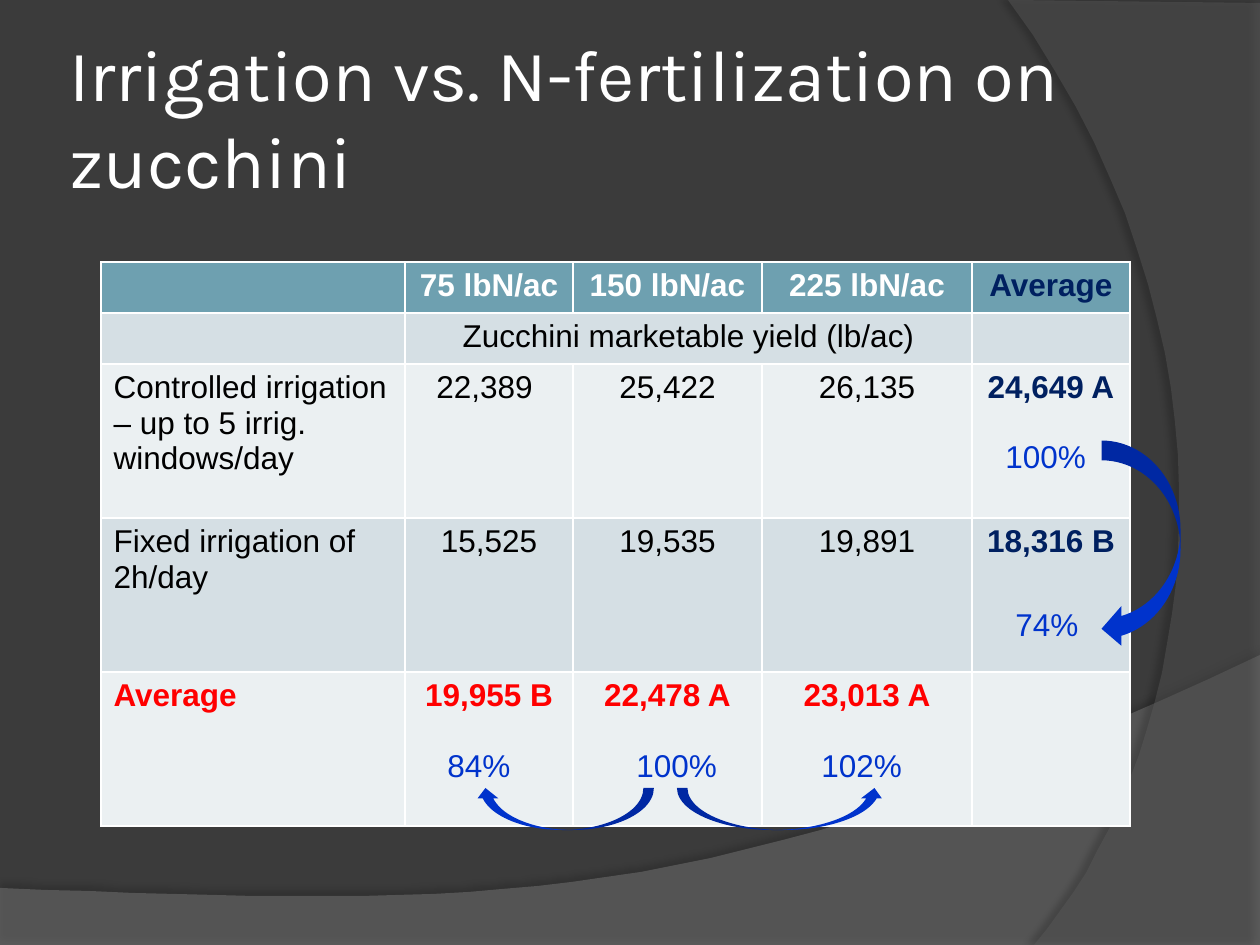
"""Build a slide comparing irrigation and N-fertilization on zucchini yield."""
from lxml import etree
from pptx import Presentation
from pptx.dml.color import RGBColor
from pptx.enum.shapes import MSO_SHAPE
from pptx.enum.text import MSO_ANCHOR, MSO_AUTO_SIZE, PP_ALIGN
from pptx.oxml.ns import qn
from pptx.util import Emu, Pt

CURVED_UP = MSO_SHAPE.CURVED_UP_ARROW
MIDDLE = MSO_ANCHOR.MIDDLE
LEFT, CENTER = PP_ALIGN.LEFT, PP_ALIGN.CENTER
FIT_SHAPE = MSO_AUTO_SIZE.SHAPE_TO_FIT_TEXT
SCALE = 914400 / 126

WHITE = RGBColor(0xFF, 0xFF, 0xFF)
BLACK = RGBColor(0, 0, 0)
BACKGROUND = RGBColor(0x3B, 0x3B, 0x3B)
WAVE_GRAY = RGBColor(0x7F, 0x7F, 0x7F)
ARC_GRAY = RGBColor(0x5E, 0x5E, 0x5E)
TEAL = RGBColor(0x6E, 0xA0, 0xB0)
BAND_DARK = RGBColor(0xD5, 0xDF, 0xE4)
BAND_LIGHT = RGBColor(0xEB, 0xF0, 0xF2)
NAVY = RGBColor(0x00, 0x20, 0x60)
RED = RGBColor(0xFF, 0, 0)
BLUE = RGBColor(0x00, 0x33, 0xCC)

COL_WIDTHS = (304, 168, 189, 210, 158)
ROW_HEIGHTS = (51, 51, 154, 154, 154)
ROW_FILLS = (TEAL, BAND_DARK, BAND_LIGHT, BAND_DARK, BAND_LIGHT)
ROWS = (
    ("", "75 lbN/ac", "150 lbN/ac", "225 lbN/ac", "Average"),
    ("", "Zucchini marketable yield (lb/ac)", "", "", ""),
    ("Controlled irrigation – up to 5 irrig. windows/day",
     "22,389 ", "25,422", "26,135", "24,649 A"),
    ("Fixed irrigation of 2h/day", "15,525", "19,535", "19,891", "18,316 B"),
    ("Average", "19,955 B", "22,478 A", "23,013 A", ""),
)
PERCENTAGES = (
    ("84%", 435, 740, 89), ("100%", 624, 740, 107), ("102%", 809, 740, 107),
    ("100%", 993, 431, 107), ("74%", 1003, 599, 89),
)


def px(*values):
    """Turn pixel lengths into EMU."""
    return [Emu(round(v * SCALE)) for v in values]


def set_font(p, name, size, color, bold=False):
    """Format a whole paragraph."""
    p.font.name, p.font.size, p.font.bold = name, Pt(size), bold
    p.font.color.rgb = color


def bezier(start, c1, c2, end, steps=32):
    """Return points along a cubic curve, without its start."""
    points = []
    for t in (i / steps for i in range(1, steps + 1)):
        weights = ((1 - t) ** 3, 3 * t * (1 - t) ** 2, 3 * t * t * (1 - t), t ** 3)
        points.append(tuple(sum(w * v for w, v in zip(weights, axis))
                            for axis in zip(start, c1, c2, end)))
    return points


def add_backdrop(s, corners, curve, color, opacity, shadow):
    """Add a translucent outline with one curved edge and a soft shadow."""
    builder = s.shapes.build_freeform(*corners[0], scale=SCALE)
    builder.add_line_segments(corners[1:] + bezier(corners[-1], *curve))
    sp = builder.convert_to_shape()
    sp.fill.solid()
    sp.fill.fore_color.rgb = color
    sp.line.fill.background()
    clr = sp.element.spPr.find(qn("a:solidFill"))[0]
    etree.SubElement(clr, qn("a:alpha"), val=str(opacity * 1000))
    sp.shadow.inherit = False
    alpha, blur, dist, angle = shadow
    outer = etree.SubElement(
        sp.element.spPr.find(qn("a:effectLst")), qn("a:outerShdw"),
        blurRad=str(Pt(blur)), dist=str(Pt(dist)), dir=str(angle * 60000))
    shade = etree.SubElement(outer, qn("a:srgbClr"), val=str(BLACK))
    etree.SubElement(shade, qn("a:alpha"), val=str(alpha * 1000))


def add_title(s, text):
    """Format the title placeholder and lay it over the backdrop."""
    title = s.shapes.title
    title.left, title.top, title.width, title.height = px(63, 38, 1029, 157)
    tf = title.text_frame
    tf.text = text
    tf.word_wrap, tf.vertical_anchor = True, MIDDLE
    tf.margin_left, tf.margin_top, tf.margin_right, tf.margin_bottom = px(6, 6, 6, 6)
    p = tf.paragraphs[0]
    p.alignment = LEFT
    set_font(p, "Karla", 41.4, WHITE)
    title.element.getparent().append(title.element)


def cell_color(row, col):
    """Choose the text colour of a table cell."""
    if col == 4:
        return NAVY
    return {0: WHITE, 4: RED}.get(row, BLACK)


def add_yield_table(s):
    """Add the table of yields by irrigation and nitrogen rate."""
    frame = s.shapes.add_table(len(ROWS), len(COL_WIDTHS),
                               *px(101, 262, sum(COL_WIDTHS), sum(ROW_HEIGHTS)))
    table = frame.table
    for column, width in zip(table.columns, px(*COL_WIDTHS)):
        column.width = width
    for row, height in zip(table.rows, px(*ROW_HEIGHTS)):
        row.height = height
    for i, texts in enumerate(ROWS):
        for j, text in enumerate(texts):
            cell = table.cell(i, j)
            cell.fill.solid()
            cell.fill.fore_color.rgb = ROW_FILLS[i]
            cell.text = text
            p = cell.text_frame.paragraphs[0]
            p.alignment = CENTER if j else LEFT
            set_font(p, "Arial", 18, cell_color(i, j), i in (0, 4) or j == 4)
    table.cell(1, 1).merge(table.cell(1, 3))


def add_arrow(s, box, rotation=0, flip=None):
    """Add a curved arrow between two percentages."""
    sp = s.shapes.add_shape(CURVED_UP, *px(*box))
    sp.fill.solid()
    sp.fill.fore_color.rgb = BLUE
    sp.line.fill.background()
    sp.shadow.inherit = False
    sp.rotation = rotation
    if flip:
        sp.element.spPr.find(qn("a:xfrm")).set(flip, "1")


def add_percentage(s, text, left, top, width):
    """Add a relative yield label."""
    tf = s.shapes.add_textbox(*px(left, top, width, 50)).text_frame
    tf.text = text
    tf.word_wrap, tf.auto_size = False, FIT_SHAPE
    set_font(tf.paragraphs[0], "Arial", 18, BLUE)


def main():
    """Build and save the slide."""
    prs = Presentation()
    prs.slide_width, prs.slide_height = px(1260, 945)
    s = prs.slides.add_slide(prs.slide_layouts[5])
    s.background.fill.solid()
    s.background.fill.fore_color.rgb = BACKGROUND
    add_backdrop(s, [(0, 888), (0, 946), (1260, 946), (1260, 655)],
                 [(704, 919), (493, 906), (0, 888)], WAVE_GRAY, 45, (35, 4, 3.5, 270))
    add_backdrop(s, [(1260, 3), (1260, 945), (1034, 945)],
                 [(1178, 780), (1283, 378), (1008, 0)], ARC_GRAY, 40, (45, 4, 4, 180))
    add_title(s, "Irrigation vs. N-fertilization on zucchini")
    add_yield_table(s)
    add_arrow(s, (677, 788, 208, 42))
    add_arrow(s, (475, 788, 179, 42), flip="flipH")
    for label in PERCENTAGES:
        add_percentage(s, *label)
    add_arrow(s, (1037, 505, 208, 79), rotation=90, flip="flipV")
    prs.save("out.pptx")


if __name__ == "__main__":
    main()
